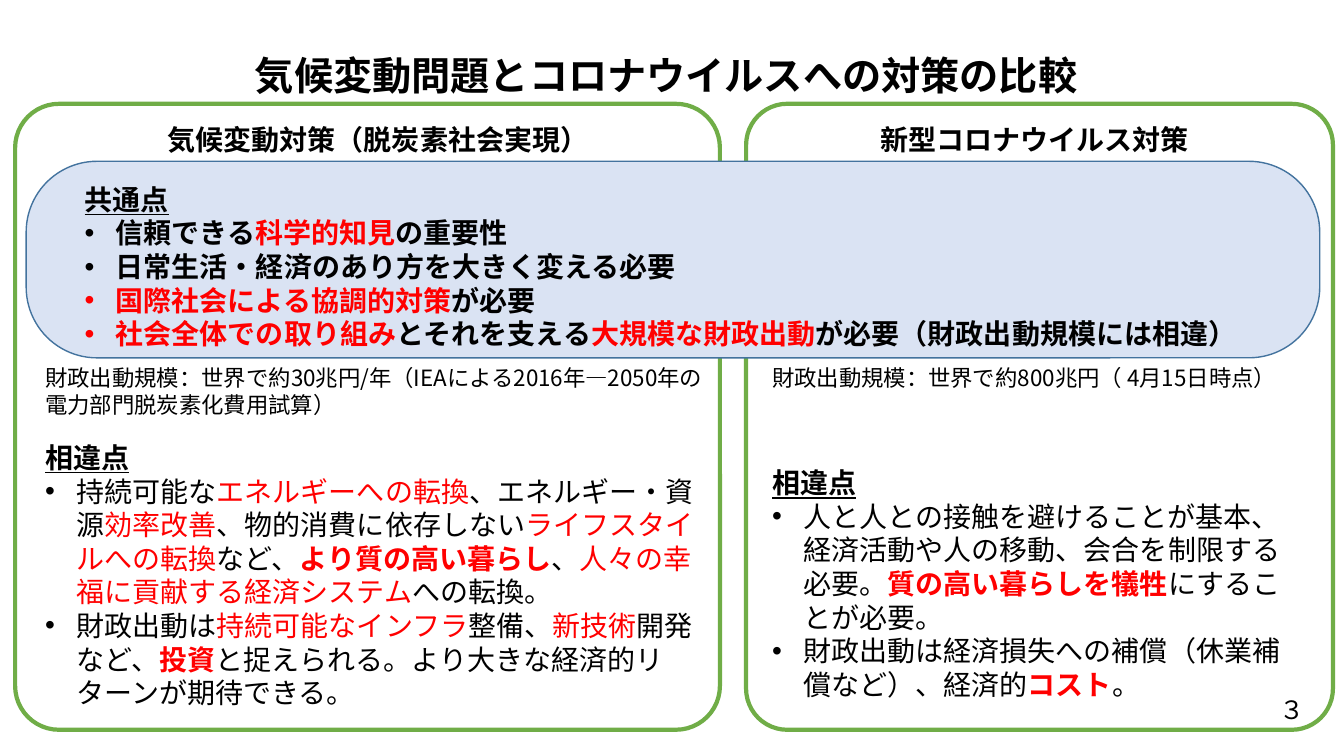
from dataclasses import dataclass

from lxml import etree
from pptx import Presentation
from pptx import util as u
from pptx.dml.color import RGBColor
from pptx.enum import shapes, text
from pptx.oxml import ns


@dataclass(frozen=True)
class Theme:
    font: str = "Noto Sans CJK JP"
    ink: str = "000000"
    accent: str = "FF0000"
    paper: str = "FFFFFF"
    panel_line: str = "70AD47"
    band_fill: str = "DAE3F3"
    band_line: str = "43739E"
    title: int = 28
    body: int = 20
    page: int = 18
    note: int = 16
    leading: float = 1.2


THEME = Theme()
PLAIN = {"bold": False}
BOLD = {"bold": True}
HEADING = {"bold": True, "underline": True}
RED = {"bold": False, "color": THEME.accent}
BOLD_RED = {"bold": True, "color": THEME.accent}
HANG = 0.31

COMMON = [
    [("信頼できる", BOLD), ("科学的知見", BOLD_RED), ("の重要性", BOLD)],
    [("日常生活・経済のあり方を大きく変える必要", BOLD)],
    [("国際社会による協調的対策", BOLD_RED), ("が必要", BOLD)],
    [("社会全体での取り組み", BOLD_RED), ("とそれを支える", BOLD),
     ("大規模な財政出動", BOLD_RED), ("が必要（財政出動規模には相違）", BOLD)],
]
CLIMATE = {
    "heading": "気候変動対策（脱炭素社会実現）",
    "note": "財政出動規模：世界で約30兆円/年（IEAによる2016年―2050年の電力部門脱炭素化費用試算）",
    "differences": [
        [("持続可能な", PLAIN), ("エネルギーへの転換", RED), ("、エネルギー・資源", PLAIN),
         ("効率改善", RED), ("、物的消費に依存しない", PLAIN), ("ライフスタイルへの転換", RED),
         ("など、", PLAIN), ("より質の高い暮らし", BOLD_RED), ("、", PLAIN),
         ("人々の幸福に貢献する経済システム", RED), ("への転換。", PLAIN)],
        [("財政出動は", PLAIN), ("持続可能なインフラ", RED), ("整備、", PLAIN),
         ("新技術", RED), ("開発など、", PLAIN), ("投資", BOLD_RED),
         ("と捉えられる。より大きな経済的リターンが期待できる。", PLAIN)],
    ],
}
CORONA = {
    "heading": "新型コロナウイルス対策",
    "note": "財政出動規模：世界で約800兆円（ 4月15日時点）",
    "differences": [
        [("人と人との接触を避けることが基本、経済活動や人の移動、会合を制限する必要。", PLAIN),
         ("質の高い暮らしを犠牲", BOLD_RED), ("にすることが必要。", PLAIN)],
        [("財政出動は経済損失への補償（休業補償など）、経済的", PLAIN),
         ("コスト", BOLD_RED), ("。", PLAIN)],
    ],
}


def place(box):
    return [u.Inches(length) for length in box]


def add_rounded(slide, box, corner, fill, line, weight):
    panel = slide.shapes.add_shape(shapes.MSO_SHAPE.ROUNDED_RECTANGLE, *place(box))
    panel.adjustments[0] = corner
    panel.shadow.inherit = False
    panel.fill.solid()
    panel.fill.fore_color.rgb = RGBColor.from_string(fill)
    panel.line.color.rgb = RGBColor.from_string(line)
    panel.line.width = u.Pt(weight)


def indent(paragraph, left, first=0.0, bullet=None):
    props = paragraph._p.get_or_add_pPr()
    props.set("marL", str(u.Inches(left)))
    props.set("indent", str(u.Inches(first)))
    if bullet:
        etree.SubElement(props, ns.qn("a:buFont"), typeface="Arial")
        etree.SubElement(props, ns.qn("a:buChar"), char=bullet)


def add_runs(paragraph, runs, size):
    paragraph.line_spacing = u.Pt(size * THEME.leading)
    for words, style in runs:
        run = paragraph.add_run()
        run.text = words
        look = {"size": u.Pt(size), "name": THEME.font, **style}
        color = look.pop("color", THEME.ink)
        for name, value in look.items():
            setattr(run.font, name, value)
        run.font.color.rgb = RGBColor.from_string(color)
        etree.SubElement(run._r.get_or_add_rPr(), ns.qn("a:ea"), typeface=THEME.font)


def add_text(slide, box, runs, size, align=None, left=0.0, bullets=(), **frame_format):
    """One leading paragraph, then any bulleted paragraphs at the same size."""
    frame = slide.shapes.add_textbox(*place(box)).text_frame
    for name, value in {"word_wrap": True, **frame_format}.items():
        setattr(frame, name, value)
    lead = frame.paragraphs[0]
    if left:
        indent(lead, left)
    if align is not None:
        lead.alignment = align
    add_runs(lead, runs, size)
    for runs in bullets:
        item = frame.add_paragraph()
        indent(item, HANG, -HANG, "•")
        add_runs(item, runs, size)


def add_title(slide, box):
    add_text(slide, box, [("気候変動問題とコロナウイルスへの対策の比較", BOLD)],
             THEME.title, left=1.94)


def add_column(slide, box, content, differences_top, lines):
    left, top, width = box
    add_text(slide, (left, top, width, 0.43), [(content["heading"], BOLD)],
             THEME.body, align=text.PP_ALIGN.CENTER)
    add_text(slide, (left, top + 2.39, width, 0.63), [(content["note"], PLAIN)],
             THEME.note, margin_right=0)
    height = 0.1 + lines * THEME.body * THEME.leading / 72
    add_text(slide, (left, top + differences_top, width, height), [("相違点", HEADING)],
             THEME.body, bullets=content["differences"])


def add_common_band(slide, box):
    left, top, width, height = box
    add_rounded(slide, box, 0.36, THEME.band_fill, THEME.band_line, 1)
    add_text(slide, (left + 0.48, top + 0.16, width - 0.87, height - 0.17),
             [("共通点", HEADING)], THEME.body, bullets=COMMON)


def build_comparison(slide):
    for left, width in ((7.4, 5.82), (0.15, 6.99)):
        add_rounded(slide, (left, 1.03, width, 6.21), 0.07,
                    THEME.paper, THEME.panel_line, 3)
    add_title(slide, (0.49, 0.46, 12.35, 0.57))
    add_column(slide, (0.35, 1.17, 6.8), CLIMATE, 3.15, lines=8)
    add_column(slide, (7.56, 1.17, 5.4), CORONA, 3.4, lines=7)
    add_common_band(slide, (0.26, 1.6, 12.83, 1.95))
    add_text(slide, (12.59, 6.84, 0.73, 0.4), [("３", PLAIN)], THEME.page)


def main():
    deck = Presentation()
    deck.slide_width, deck.slide_height = u.Inches(13.33), u.Inches(7.5)
    build_comparison(deck.slides.add_slide(deck.slide_layouts[6]))
    deck.save("out.pptx")


if __name__ == "__main__":
    main()
